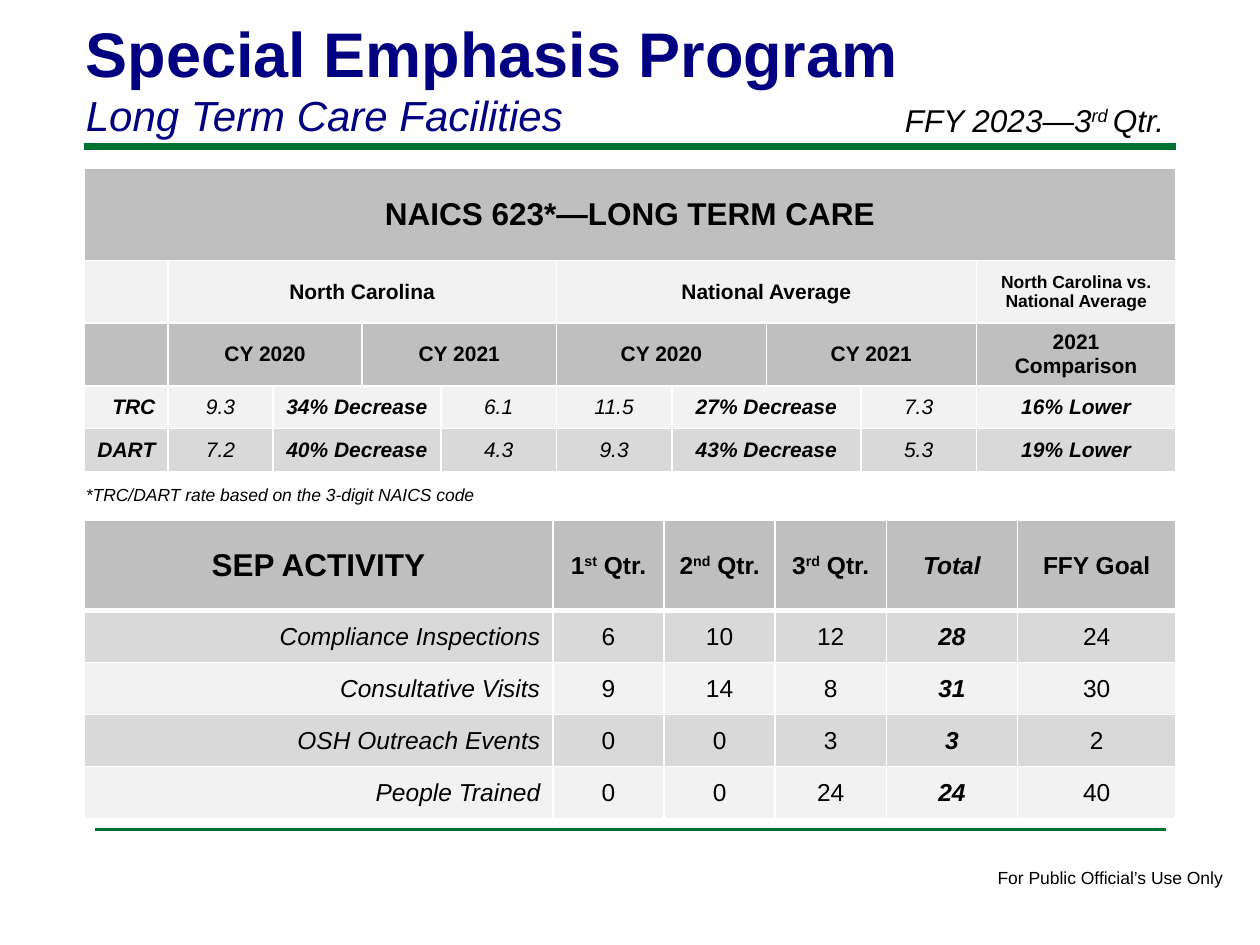
from lxml import etree
from pptx import Presentation
from pptx.dml.color import RGBColor
from pptx.enum import shapes, text
from pptx.oxml import ns
from pptx.util import Pt

COLORS = {
    "navy": "000080", "green": "007030", "black": "000000", "white": "FFFFFF",
    "header": "BFBFBF", "dark": "D9D9D9", "light": "F2F2F2",
}
LEFT, RIGHT = 48, 672
CENTER, RIGHT_ALIGN = text.PP_ALIGN.CENTER, text.PP_ALIGN.RIGHT

# Spanned rows are lists of (text, number of columns)
RATE_COLUMNS = [48, 60, 51, 45, 66, 66, 54, 54, 66, 114]
RATE_HEIGHTS = [53, 35.5, 35.5, 24.5, 24.5]
RATE_HEADERS = [
    [("NAICS 623*—LONG TERM CARE", 10)],
    [("", 1), ("North Carolina", 4), ("National Average", 4),
     ("North Carolina vs. National Average", 1)],
    [("", 1), ("CY 2020", 2), ("CY 2021", 2), ("CY 2020", 2), ("CY 2021", 2),
     ("2021 Comparison", 1)],
]
RATE_SPANS = [1, 1, 2, 1, 1, 2, 1, 1]
RATES = [
    ["TRC", "9.3", "34% Decrease", "6.1", "11.5", "27% Decrease", "7.3", "16% Lower"],
    ["DART", "7.2", "40% Decrease", "4.3", "9.3", "43% Decrease", "5.3", "19% Lower"],
]

# Text between ^ marks is superscript
ACTIVITY_COLUMNS = [268, 63.5, 63.5, 63.5, 75, 90.5]
ACTIVITY_HEIGHTS = [51.5] + [29.75] * 4
ACTIVITY_HEADER = ["SEP ACTIVITY", "1^st^ Qtr.", "2^nd^ Qtr.", "3^rd^ Qtr.",
                   "Total", "FFY Goal"]
ACTIVITIES = [
    ["Compliance Inspections", "6", "10", "12", "28", "24"],
    ["Consultative Visits", "9", "14", "8", "31", "30"],
    ["OSH Outreach Events", "0", "0", "3", "3", "2"],
    ["People Trained", "0", "0", "24", "24", "40"],
]


def rgb(name):
    return RGBColor.from_string(COLORS[name])


def add_runs(paragraph, content, size, bold=False, italic=False, color="black"):
    for index, part in enumerate(content.split("^")):
        run = paragraph.add_run()
        run.text = part
        font = run.font
        font.name, font.size = "Arial", Pt(size)
        font.bold, font.italic = bold, italic
        font.color.rgb = rgb(color)
        if index % 2:
            run._r.get_or_add_rPr().set("baseline", "30000")


def add_text(slide, left, top, width, height, wrap=True):
    box = slide.shapes.add_textbox(Pt(left), Pt(top), Pt(width), Pt(height))
    frame = box.text_frame
    frame.word_wrap = wrap
    frame.auto_size = text.MSO_AUTO_SIZE.SHAPE_TO_FIT_TEXT
    return frame


def add_rule(slide, left, right, y, weight):
    rule = slide.shapes.add_connector(
        shapes.MSO_CONNECTOR.STRAIGHT, Pt(left), Pt(y), Pt(right), Pt(y))
    rule.line.color.rgb = rgb("green")
    rule.line.width = Pt(weight)
    etree.SubElement(rule._element.spPr, ns.qn("a:effectLst"))


def add_table(slide, top, columns, heights):
    table = slide.shapes.add_table(
        len(heights), len(columns), Pt(LEFT), Pt(top),
        Pt(sum(columns)), Pt(sum(heights))).table
    for column, width in zip(table.columns, columns):
        column.width = Pt(width)
    for row, height in zip(table.rows, heights):
        row.height = Pt(height)
    return table


def style_cell(cell, fill, bottom=1, top=1):
    """White borders first, then the fill, as the schema orders them."""
    properties = cell._tc.get_or_add_tcPr()
    for side, weight in (("L", 1), ("R", 1), ("T", top), ("B", bottom)):
        border = etree.SubElement(properties, ns.qn(f"a:ln{side}"), w=str(Pt(weight)))
        solid = etree.SubElement(border, ns.qn("a:solidFill"))
        etree.SubElement(solid, ns.qn("a:srgbClr"), val=COLORS["white"])
    cell.fill.solid()
    cell.fill.fore_color.rgb = rgb(fill)


def write_cell(cell, content, size, bold=False, italic=False, align=CENTER):
    cell.vertical_anchor = text.MSO_ANCHOR.MIDDLE
    paragraph = cell.text_frame.paragraphs[0]
    paragraph.alignment = align
    if content:
        add_runs(paragraph, content, size, bold, italic)


def add_rate_table(slide):
    table = add_table(slide, 96, RATE_COLUMNS, RATE_HEIGHTS)
    rows = RATE_HEADERS + [list(zip(rates, RATE_SPANS)) for rates in RATES]
    fills = ["header", "light", "header", "light", "dark"]
    for r, (entries, fill) in enumerate(zip(rows, fills)):
        is_body = r >= len(RATE_HEADERS)
        for c in range(len(RATE_COLUMNS)):
            style_cell(table.cell(r, c), fill)
        start = 0
        for content, span in entries:
            cell = table.cell(r, start)
            if span > 1:
                cell.merge(table.cell(r, start + span - 1))
            size = 18 if r == 0 else 10 if "vs." in content else 12
            is_number = is_body and content.replace(".", "").isdigit()
            align = RIGHT_ALIGN if is_body and start == 0 else CENTER
            write_cell(cell, content, size, not is_number, is_body, align)
            start += span


def add_activity_table(slide):
    table = add_table(slide, 297.4, ACTIVITY_COLUMNS, ACTIVITY_HEIGHTS)
    total = ACTIVITY_HEADER.index("Total")
    for c, heading in enumerate(ACTIVITY_HEADER):
        cell = table.cell(0, c)
        style_cell(cell, "header", bottom=3)
        write_cell(cell, heading, 14 if c else 18, True, c == total)
    for r, activity in enumerate(ACTIVITIES, start=1):
        for c, content in enumerate(activity):
            cell = table.cell(r, c)
            style_cell(cell, "dark" if r % 2 else "light", top=3 if r == 1 else 1)
            write_cell(cell, content, 14, c == total, c in (0, total),
                       CENTER if c else RIGHT_ALIGN)


def main():
    deck = Presentation()
    deck.slide_width, deck.slide_height = Pt(720), Pt(540)
    slide = deck.slides.add_slide(deck.slide_layouts[6])

    # Rules and footer
    add_rule(slide, LEFT, RIGHT, 84, 4)
    add_rule(slide, 54, 666, 474, 2)
    footer = add_text(slide, 563, 492, 144.5, 19.4, wrap=False)
    add_runs(footer.paragraphs[0], "For Public Official’s Use Only", 10)

    # Title and reporting period
    title = add_text(slide, 42, 4.5, 594, 80)
    add_runs(title.paragraphs[0], "Special Emphasis Program", 36, bold=True, color="navy")
    add_runs(title.add_paragraph(), "Long Term Care Facilities", 24,
             italic=True, color="navy")
    period = add_text(slide, 510, 54, 180, 29)
    add_runs(period.paragraphs[0], "FFY 2023—3^rd ^Qtr.", 18, italic=True)

    # Tables and the note between them
    add_activity_table(slide)
    note = add_text(slide, 42, 273, 243.5, 19.4, wrap=False)
    add_runs(note.paragraphs[0], "*TRC/DART rate based on the 3-digit NAICS code",
             10, italic=True)
    add_rate_table(slide)

    deck.save("out.pptx")


if __name__ == "__main__":
    main()
